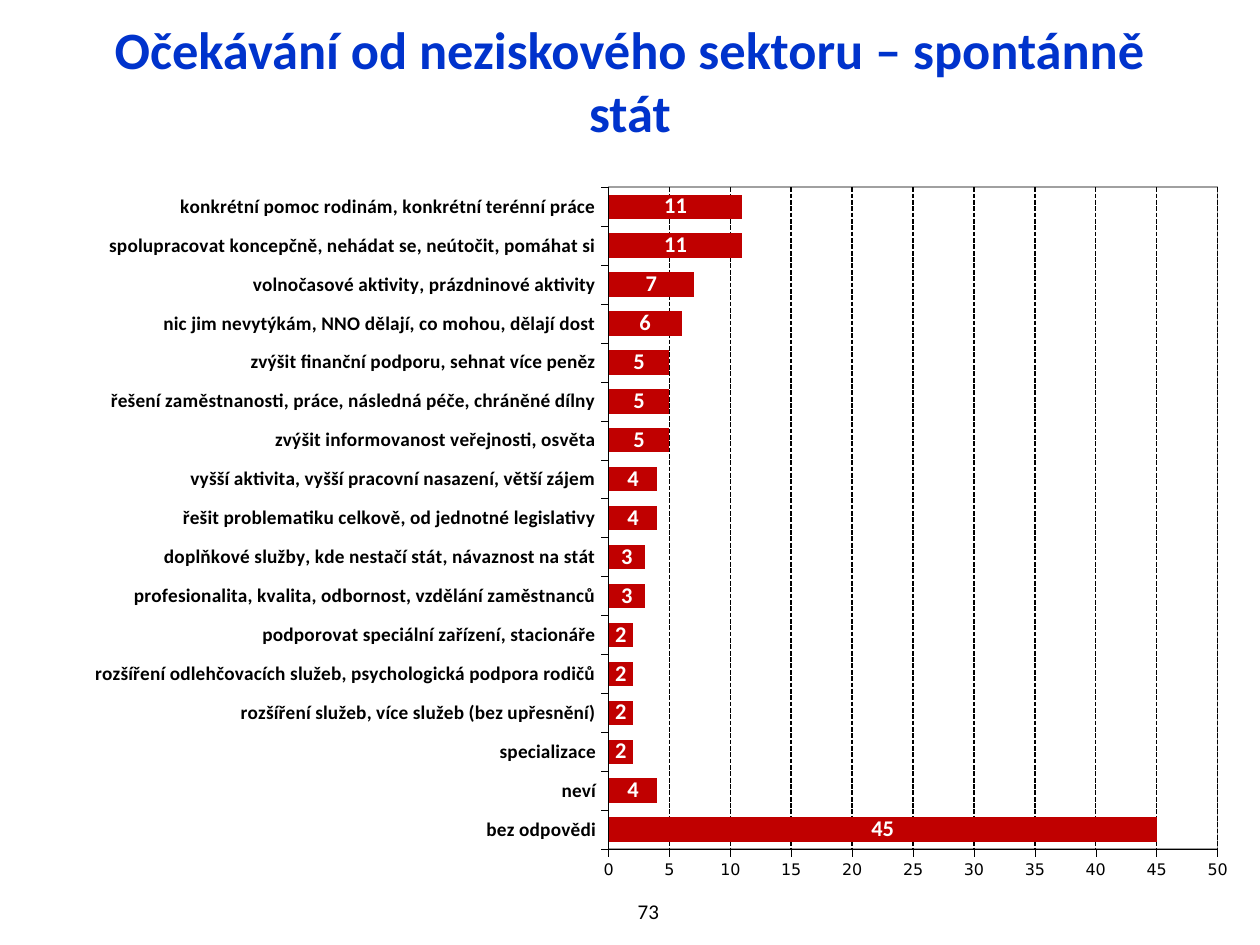
from lxml import etree
from pptx import Presentation
from pptx.chart.data import CategoryChartData
from pptx.dml.color import RGBColor
from pptx.enum.chart import XL_CHART_TYPE, XL_LABEL_POSITION, XL_TICK_MARK
from pptx.enum.dml import MSO_LINE
from pptx.enum.text import MSO_ANCHOR, MSO_AUTO_SIZE, PP_ALIGN
from pptx.oxml import parse_xml
from pptx.oxml.ns import nsdecls
from pptx.util import Inches, Pt


def set_font(font, name, size, color, bold=False):
    font.name, font.size, font.bold = name, Pt(size), bold
    font.color.rgb = RGBColor.from_string(color)


def set_line(line, color, width):
    line.color.rgb = RGBColor.from_string(color)
    line.width = Pt(width)


deck = Presentation()
deck.slide_width, deck.slide_height = Inches(10), Inches(7.5)
slide = deck.slides.add_slide(deck.slide_layouts[5])

# Title and page number
title = slide.shapes.title
title.left, title.top, title.width, title.height = map(Inches, (0.5, 0.16, 9, 0.95))
title.text_frame.text = "Očekávání od neziskového sektoru – spontánně\vstát"
set_font(title.text_frame.paragraphs[0].font, "Calibri", 30, "0033CC", True)

page_number = slide.shapes.add_textbox(*map(Inches, (4.9, 7.03, 0.49, 0.4)))
page_number.text_frame.text = "73"
set_font(page_number.text_frame.paragraphs[0].font, "Calibri", 12, "000000")

for box in (title, page_number):
    frame = box.text_frame
    frame.word_wrap = True
    frame.auto_size = MSO_AUTO_SIZE.NONE
    frame.vertical_anchor = MSO_ANCHOR.MIDDLE
    frame.paragraphs[0].alignment = PP_ALIGN.CENTER

# Expectations in percent, from the bottom bar to the top one
expectations = [
    ("bez odpovědi", 45),
    ("neví", 4),
    ("specializace", 2),
    ("rozšíření služeb, více služeb (bez upřesnění)", 2),
    ("rozšíření odlehčovacích služeb, psychologická podpora rodičů", 2),
    ("podporovat speciální zařízení, stacionáře", 2),
    ("profesionalita, kvalita, odbornost, vzdělání zaměstnanců", 3),
    ("doplňkové služby, kde nestačí stát, návaznost na stát", 3),
    ("řešit problematiku celkově, od jednotné legislativy", 4),
    ("vyšší aktivita, vyšší pracovní nasazení, větší zájem", 4),
    ("zvýšit informovanost veřejnosti, osvěta", 5),
    ("řešení zaměstnanosti, práce, následná péče, chráněné dílny", 5),
    ("zvýšit finanční podporu, sehnat více peněz", 5),
    ("nic jim nevytýkám, NNO dělají, co mohou, dělají dost", 6),
    ("volnočasové aktivity, prázdninové aktivity", 7),
    ("spolupracovat koncepčně, nehádat se, neútočit, pomáhat si", 11),
    ("konkrétní pomoc rodinám, konkrétní terénní práce", 11),
]
data = CategoryChartData(number_format="0")
data.categories = [label for label, share in expectations]
data.add_series("Series 1", [share for label, share in expectations])

chart = slide.shapes.add_chart(
    XL_CHART_TYPE.BAR_STACKED, *map(Inches, (0.16, 1.48, 9.61, 5.56)), data
).chart
chart.has_legend = False
chart.has_title = False
set_font(chart.font, "Arial", 11, "000080", True)

plot = chart.plots[0]
plot.gap_width, plot.overlap = 60, 100
plot.vary_by_categories = False
bars = plot.series[0]
bars.format.fill.solid()
bars.format.fill.fore_color.rgb = RGBColor.from_string("C00000")
bars.format.line.fill.background()

labels = bars.data_labels
labels.show_value = True
labels.number_format, labels.number_format_is_linked = "0", False
labels.position = XL_LABEL_POSITION.CENTER
set_font(labels.font, "Calibri", 12.8, "FFFFFF", True)

# Axes
category_axis, value_axis = chart.category_axis, chart.value_axis
for axis in (category_axis, value_axis):
    axis.major_tick_mark = XL_TICK_MARK.OUTSIDE
    axis.minor_tick_mark = XL_TICK_MARK.NONE
    set_line(axis.format.line, "000000", 0.23)
set_font(category_axis.tick_labels.font, "Calibri", 11, "000000", True)
set_font(value_axis.tick_labels.font, "DejaVu Sans", 9.1, "000000")
value_axis.minimum_scale, value_axis.maximum_scale, value_axis.major_unit = 0, 50, 5
value_axis.tick_labels.number_format = "0"
value_axis.tick_labels.number_format_is_linked = False
value_axis.has_major_gridlines = True
gridline = value_axis.major_gridlines.format.line
set_line(gridline, "000000", 0.91)
gridline.dash_style = MSO_LINE.SQUARE_DOT

# Fixed inner plot area with a thin grey frame
plot_area = chart.element.find(".//{*}plotArea")
for old_layout in plot_area.findall("{*}layout"):
    plot_area.remove(old_layout)
layout = parse_xml(
    f'<c:layout {nsdecls("c")}><c:manualLayout><c:layoutTarget val="inner"/>'
    '<c:xMode val="edge"/><c:yMode val="edge"/></c:manualLayout></c:layout>'
)
for side, share in (("x", 0.486), ("y", 0), ("w", 0.503), ("h", 0.946)):
    etree.SubElement(layout[0], layout.tag.replace("layout", side)).set("val", str(share))
plot_area.insert(0, layout)
plot_area.append(parse_xml(
    f'<c:spPr {nsdecls("c", "a")}><a:noFill/><a:ln w="12700"><a:solidFill>'
    '<a:srgbClr val="A0A0A0"/></a:solidFill></a:ln></c:spPr>'
))

deck.save("out.pptx")
